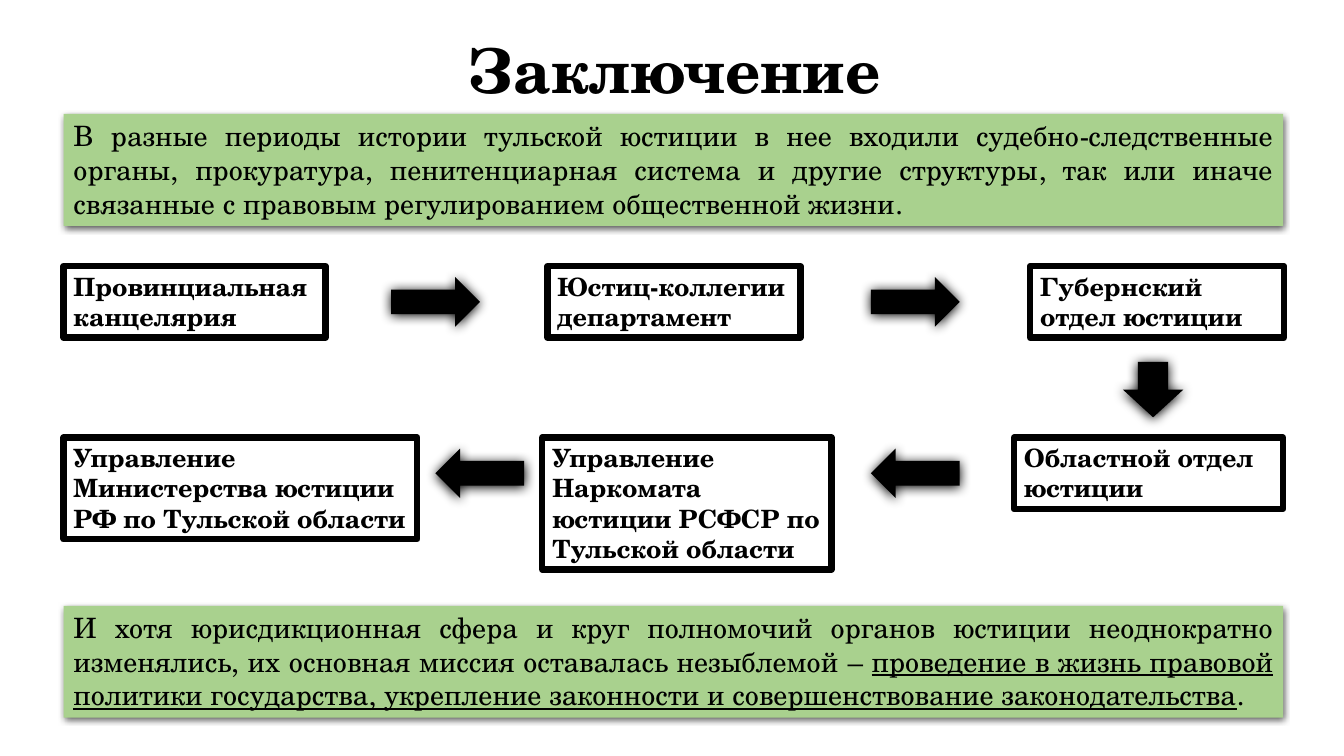
from lxml import etree
from pptx import Presentation
from pptx import util as u
from pptx.dml.color import RGBColor
from pptx.enum import shapes, text
from pptx.oxml.ns import qn

BLACK = RGBColor(0x00, 0x00, 0x00)
GREEN = RGBColor(0xA9, 0xD1, 0x8E)
FONT = "TeX Gyre Schola"
SHAPE = shapes.MSO_SHAPE
ALIGN = text.PP_ALIGN

LEFT = 45.4
TOP_ROW, BOTTOM_ROW = 190.1, 312.5
TWO_LINES, THREE_LINES, FOUR_LINES = 51.1, 72.7, 94.3
ARROW_WIDTH, ARROW_HEIGHT = 63.4, 35.3

STAGES = [
    ("Провинциальная канцелярия", LEFT, TOP_ROW, 187.2, TWO_LINES),
    ("Юстиц-коллегии департамент", 391, TOP_ROW, 180.7, TWO_LINES),
    ("Губернский отдел юстиции", 735.8, TOP_ROW, 181.4, TWO_LINES),
    ("Областной отдел юстиции", 724.3, BOTTOM_ROW, 192.2, TWO_LINES),
    ("Управление Наркомата юстиции РСФСР по Тульской области",
     387.4, BOTTOM_ROW, 206.6, FOUR_LINES),
    ("Управление Министерства юстиции РФ по Тульской области",
     LEFT, BOTTOM_ROW, 252.7, THREE_LINES),
]


def write(frame, runs, size, bold=False, align=ALIGN.LEFT,
          anchor=text.MSO_ANCHOR.TOP, line_spacing=None, space_after=0):
    """Fill a text frame with one paragraph of (wording, underlined) runs."""
    frame.word_wrap = True
    frame.vertical_anchor = anchor
    paragraph = frame.paragraphs[0]
    paragraph.alignment = align
    paragraph.line_spacing = line_spacing
    paragraph.space_after = u.Pt(space_after)
    for wording, underlined in runs:
        run = paragraph.add_run()
        run.text = wording
        font = run.font
        font.name, font.size, font.bold = FONT, u.Pt(size), bold
        font.underline = underlined
        font.color.rgb = BLACK


class ConclusionSlide:
    def __init__(self, slide):
        self.slide = slide

    def title(self, wording):
        box = self.slide.shapes.add_textbox(*map(u.Pt, (67.7, 0, 828, 104.4)))
        write(box.text_frame, [(wording, False)], 44, bold=True, align=ALIGN.CENTER,
              anchor=text.MSO_ANCHOR.MIDDLE, line_spacing=0.9)

    def shape(self, kind, left, top, width, height, fill=None, line_width=None):
        shape = self.slide.shapes.add_shape(
            kind, *map(u.Pt, (left, top, width, height)))
        shape.shadow.inherit = False
        if fill is None:
            shape.fill.background()
        else:
            shape.fill.solid()
            shape.fill.fore_color.rgb = fill
        if line_width is None:
            shape.line.fill.background()
        else:
            shape.line.color.rgb = BLACK
            shape.line.width = u.Pt(line_width)
        return shape

    def drop_shadow(self, shape, blur, distance, opacity):
        effects = shape._element.spPr.find(qn("a:effectLst"))
        shadow = etree.SubElement(
            effects, qn("a:outerShdw"), blurRad=str(u.Pt(blur)),
            dist=str(u.Pt(distance)), dir="5400000", algn="ctr", rotWithShape="0")
        color = etree.SubElement(shadow, qn("a:srgbClr"), val=str(BLACK))
        etree.SubElement(color, qn("a:alpha"), val=str(opacity * 1000))

    def banner(self, top, runs):
        shape = self.shape(SHAPE.RECTANGLE, LEFT, top, 871.2, 79.9, fill=GREEN)
        self.drop_shadow(shape, 4.5, 1.5, 63)
        write(shape.text_frame, runs, 20, align=ALIGN.JUSTIFY, space_after=6)

    def stage(self, wording, left, top, width, height):
        shape = self.shape(SHAPE.RECTANGLE, left, top, width, height, line_width=4.5)
        write(shape.text_frame, [(wording, False)], 18, bold=True)

    def arrow(self, left, top, width=ARROW_WIDTH, height=ARROW_HEIGHT,
              kind=SHAPE.RIGHT_ARROW, rotation=0):
        shape = self.shape(kind, left, top, width, height, fill=BLACK)
        shape.rotation = rotation
        self.drop_shadow(shape, 8.5, 1, 100)


def main():
    presentation = Presentation()
    presentation.slide_width, presentation.slide_height = u.Pt(960), u.Pt(540)
    page = ConclusionSlide(presentation.slides.add_slide(presentation.slide_layouts[6]))

    page.title("Заключение")
    page.banner(81.4, [
        ("В разные периоды истории тульской юстиции в нее входили "
         "судебно-следственные органы, прокуратура, пенитенциарная система и другие "
         "структуры, так или иначе связанные с правовым регулированием "
         "общественной жизни.", False)])
    for stage in STAGES:
        page.stage(*stage)
    for left in (279.4, 622.1):
        page.arrow(left, 198)
    page.arrow(802.1, 258.5, 43.2, 39.6, kind=SHAPE.DOWN_ARROW)
    for left in (622.1, 311):
        page.arrow(left, 320.4, rotation=180)
    page.banner(432.7, [
        ("И хотя юрисдикционная сфера и круг полномочий органов юстиции неоднократно "
         "изменялись, их основная миссия оставалась незыблемой – ", False),
        ("проведение в жизнь правовой политики государства, укрепление законности "
         "и совершенствование законодательства", True),
        (".", False)])

    presentation.save("out.pptx")


if __name__ == "__main__":
    main()
